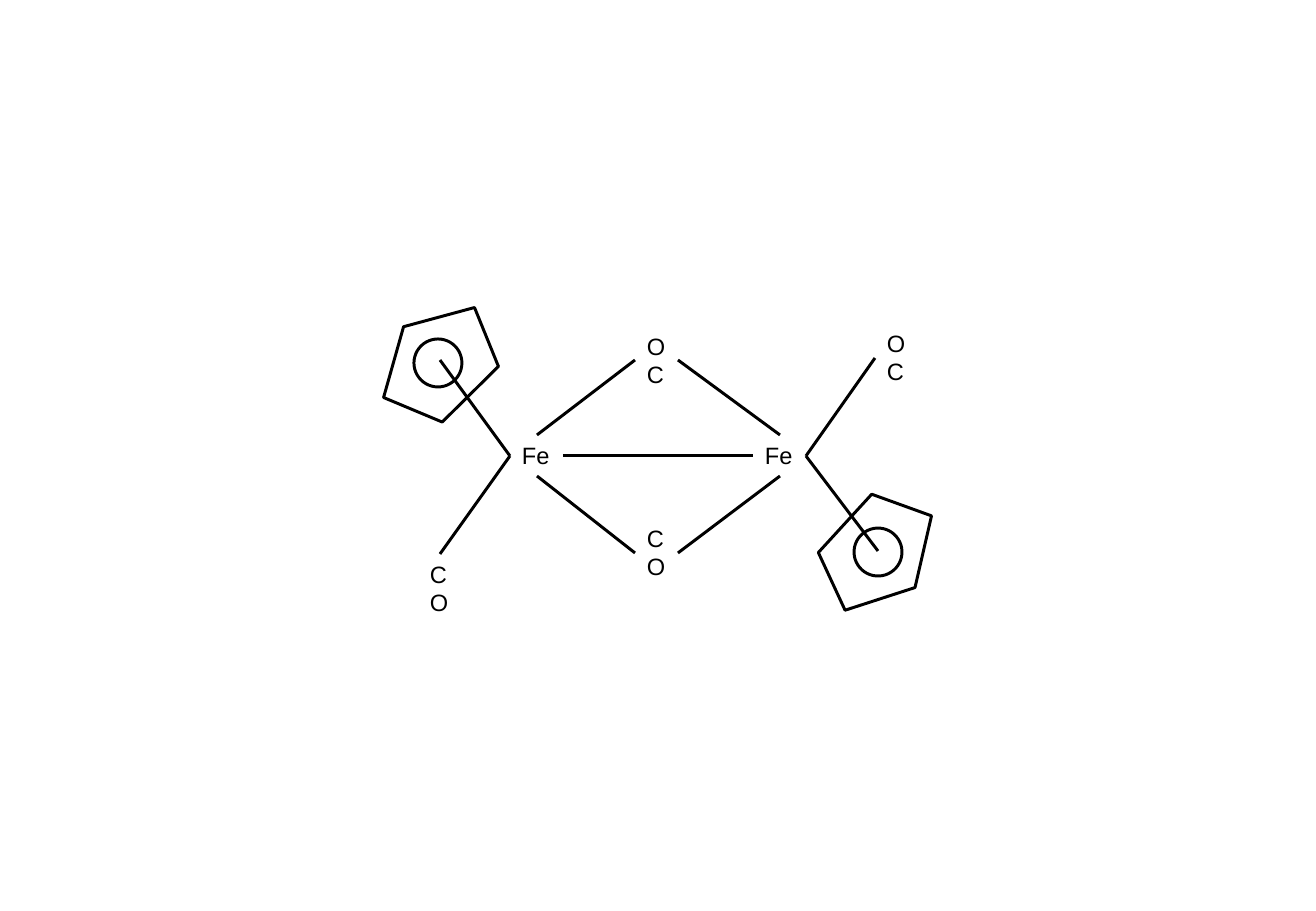
from lxml.etree import SubElement
from pptx import Presentation
from pptx.dml.color import RGBColor
from pptx.enum.shapes import MSO_CONNECTOR, MSO_SHAPE
from pptx.enum.text import MSO_AUTO_SIZE
from pptx.oxml.ns import qn
from pptx.util import Emu, Pt

BLACK = RGBColor(0, 0, 0)
PX = 7526


def px(length):
    return Emu(length * PX)


class MoleculeSlide:
    """Draws atoms, bonds and aromatic rings in one style on a slide."""

    def __init__(self, slide, color=BLACK, font="Arial", size=14, width=1.75):
        self.slide = slide
        self.color = color
        self.font = font
        self.size = Pt(size)
        self.width = Pt(width)

    def atoms(self, symbols, left, top, width, height):
        box = self.slide.shapes.add_textbox(*map(px, (left, top, width, height)))
        frame = box.text_frame
        frame.text = "\n".join(symbols)
        frame.word_wrap = False
        frame.auto_size = MSO_AUTO_SIZE.SHAPE_TO_FIT_TEXT
        for paragraph in frame.paragraphs:
            paragraph.font.name = self.font
            paragraph.font.size = self.size
            paragraph.font.color.rgb = self.color

    def bond(self, start, end):
        connector = self.slide.shapes.add_connector(
            MSO_CONNECTOR.STRAIGHT, *map(px, start + end))
        self.stroke(connector.line)
        SubElement(connector._element.spPr, qn("a:effectLst"))

    def ring(self, pentagon, circle, rotation):
        group = self.slide.shapes.add_group_shape()
        outlines = ((MSO_SHAPE.REGULAR_PENTAGON, pentagon, (128, 95)),
                    (MSO_SHAPE.OVAL, circle, (48, 48)))
        for kind, corner, size in outlines:
            shape = group.shapes.add_shape(kind, *map(px, corner + size))
            shape.rotation = rotation
            shape.shadow.inherit = False
            shape.fill.background()
            self.stroke(shape.line)

    def stroke(self, line):
        line.color.rgb = self.color
        line.width = self.width


def main():
    presentation = Presentation()
    presentation.slide_width = px(1316)
    presentation.slide_height = px(911)
    slide = presentation.slides.add_slide(presentation.slide_layouts[6])
    molecule = MoleculeSlide(slide)

    for left in (510, 753):
        molecule.atoms(["Fe"], left, 435, 53, 41)
    for symbols, left, top in (("OC", 635, 326), ("CO", 635, 518),
                               ("CO", 418, 554), ("OC", 875, 323)):
        molecule.atoms(symbols, left, top, 43, 69)

    molecule.ring((373, 313), (414, 339), 315.3)
    molecule.ring((816, 508), (854, 528), 132.5)

    molecule.bond((563, 456), (753, 456))
    for iron_y, carbonyl_y in ((435, 360), (476, 553)):
        for iron_x, carbonyl_x in ((537, 635), (780, 678)):
            molecule.bond((iron_x, iron_y), (carbonyl_x, carbonyl_y))
    for iron, ends in (((806, 456), ((875, 358), (878, 551))),
                       ((510, 456), ((440, 360), (440, 554)))):
        for end in ends:
            molecule.bond(iron, end)

    presentation.save("out.pptx")


if __name__ == "__main__":
    main()
